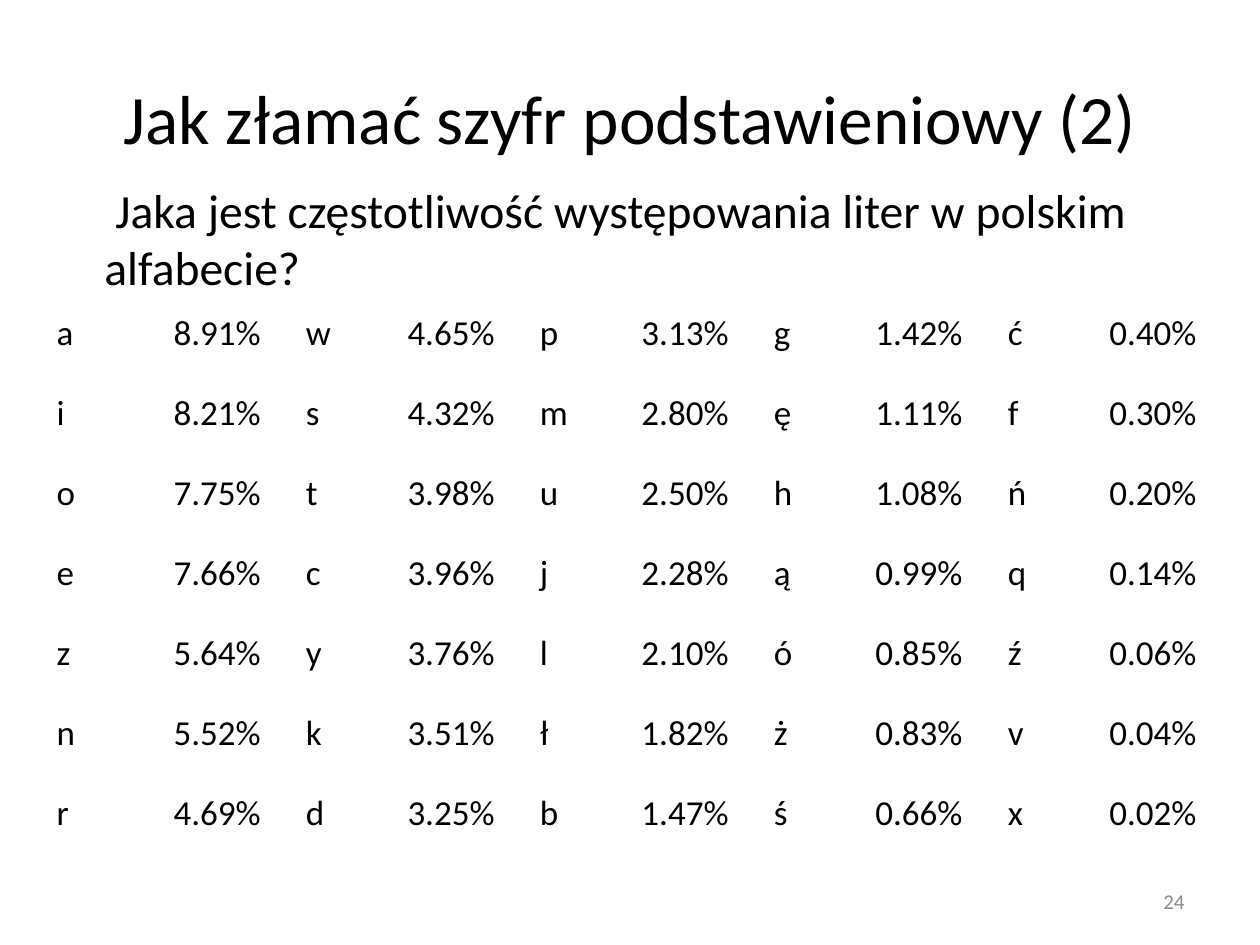
from dataclasses import dataclass

from pptx import Presentation
from pptx.dml.color import RGBColor
from pptx.enum.text import MSO_ANCHOR, MSO_AUTO_SIZE, PP_ALIGN
from pptx.util import Emu, Pt

MIDDLE = MSO_ANCHOR.MIDDLE
TOP = MSO_ANCHOR.TOP
LEFT, CENTER, RIGHT = PP_ALIGN.LEFT, PP_ALIGN.CENTER, PP_ALIGN.RIGHT
NO_FIT = MSO_AUTO_SIZE.NONE
PX_PER_INCH = 126
TITLE_ONLY = 5


@dataclass(frozen=True)
class Theme:
    font: str = "Calibri"
    ink: str = "000000"
    muted: str = "8C8C8C"
    title: float = 39.6
    lead: float = 27.2
    cell: float = 20
    number: float = 12


THEME = Theme()

# Each row lists letter and share pairs, read across the table.
SHARES = """
a 8.91% w 4.65% p 3.13% g 1.42% ć 0.40%
i 8.21% s 4.32% m 2.80% ę 1.11% f 0.30%
o 7.75% t 3.98% u 2.50% h 1.08% ń 0.20%
e 7.66% c 3.96% j 2.28% ą 0.99% q 0.14%
z 5.64% y 3.76% l 2.10% ó 0.85% ź 0.06%
n 5.52% k 3.51% ł 1.82% ż 0.83% v 0.04%
r 4.69% d 3.25% b 1.47% ś 0.66% x 0.02%
"""


def px(count):
    return Emu(round(count * 914400 / PX_PER_INCH))


def write(frame, text, size, color=THEME.ink, align=LEFT):
    """Fill the first paragraph of a text frame and return it."""
    para = frame.paragraphs[0]
    para.text = text
    para.alignment = align
    font = para.font
    font.name = THEME.font
    font.size = Pt(size)
    font.color.rgb = RGBColor.from_string(color)
    return para


def set_title(slide, text, box):
    title = slide.shapes.title
    title.left, title.top, title.width, title.height = map(px, box)
    frame = title.text_frame
    frame.auto_size = NO_FIT
    frame.vertical_anchor = MIDDLE
    write(frame, text, THEME.title, align=CENTER)


def add_text(slide, text, box, size, color=THEME.ink, align=LEFT, anchor=TOP):
    frame = slide.shapes.add_textbox(*map(px, box)).text_frame
    frame.word_wrap = True
    frame.vertical_anchor = anchor
    return write(frame, text, size, color, align)


def indent(para, left, first):
    props = para._p.get_or_add_pPr()
    props.set("marL", str(px(left)))
    props.set("indent", str(px(first)))


def add_shares(slide, rows, left, top, col_width, row_height):
    count = len(rows[0])
    table = slide.shapes.add_table(
        len(rows), count, px(left), px(top),
        px(col_width * count), px(row_height * len(rows)),
    ).table
    table.first_row = table.horz_banding = False
    for row, values in zip(table.rows, rows):
        row.height = px(row_height)
        for col, (cell, value) in enumerate(zip(row.cells, values)):
            cell.fill.background()
            cell.vertical_anchor = MIDDLE
            if col and col % 2 == 0:
                cell.margin_left = px(28)  # sets a letter apart from the share before it
            write(cell.text_frame, value, THEME.cell)


def main():
    deck = Presentation()
    deck.slide_width, deck.slide_height = px(1260), px(945)
    slide = deck.slides.add_slide(deck.slide_layouts[TITLE_ONLY])
    set_title(slide, "Jak złamać szyfr podstawieniowy (2)", (63, 38, 1134, 157))
    lead = add_text(
        slide,
        "Jaka jest częstotliwość występowania liter w polskim alfabecie?",
        (44, 175, 1134, 113), THEME.lead,
    )
    indent(lead, left=48, first=11)
    add_text(slide, "24", (903, 876, 294, 50), THEME.number,
             THEME.muted, RIGHT, MIDDLE)
    rows = [line.split() for line in SHARES.strip().splitlines()]
    add_shares(slide, rows, left=44, top=294, col_width=117, row_height=80)
    deck.save("out.pptx")


if __name__ == "__main__":
    main()
